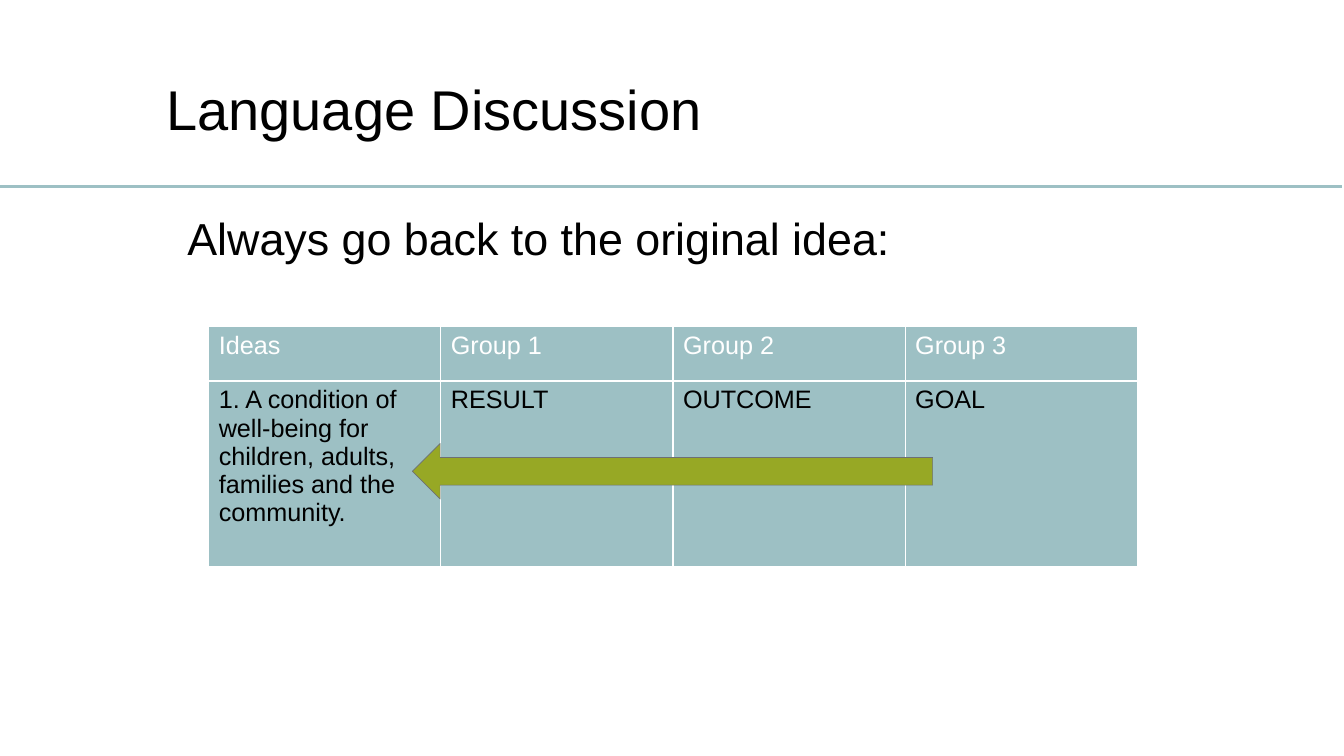
from lxml.etree import SubElement
from pptx import Presentation
from pptx.dml.color import RGBColor
from pptx.enum.shapes import MSO_CONNECTOR, MSO_SHAPE
from pptx.oxml.ns import qn
from pptx.util import Inches, Pt

TEAL = RGBColor(0x9D, 0xC0, 0xC4)
OLIVE = RGBColor(0x97, 0xA8, 0x25)
GRAY = RGBColor(0x6D, 0x70, 0x76)
WHITE = RGBColor(0xFF, 0xFF, 0xFF)
BLACK = RGBColor(0, 0, 0)

ROWS = [
    ["Ideas", "Group 1", "Group 2", "Group 3"],
    ["1. A condition of well-being for children, adults, families and the community.",
     "RESULT", "OUTCOME", "GOAL"],
]


class Deck:
    font = "Arial"

    def __init__(self, width, height):
        self.prs = Presentation()
        self.prs.slide_width = Inches(width)
        self.prs.slide_height = Inches(height)
        self.slide = self.prs.slides.add_slide(self.prs.slide_layouts[6])
        self.shapes = self.slide.shapes

    def label(self, frame, text, size, color):
        frame.word_wrap = True
        run = frame.paragraphs[0].add_run()
        run.text = text
        for name, value in {"name": self.font, "size": Pt(size), "bold": False}.items():
            setattr(run.font, name, value)
        run.font.color.rgb = color

    def text(self, box, text, size):
        shape = self.shapes.add_textbox(*map(Inches, box))
        self.label(shape.text_frame, text, size, BLACK)

    def rule(self, start, end, color, width):
        line = self.shapes.add_connector(
            MSO_CONNECTOR.STRAIGHT, *map(Inches, start + end))
        line.line.color.rgb = color
        line.line.width = Pt(width)
        SubElement(line._element.spPr, qn("a:effectLst"))

    def edge(self, cell, color, width):
        """Draw all four borders; they must precede the cell's fill."""
        props = cell._tc.get_or_add_tcPr()
        for side in ("lnL", "lnR", "lnT", "lnB"):
            line = SubElement(props, qn(f"a:{side}"), w=str(Pt(width)))
            fill = SubElement(line, qn("a:solidFill"))
            SubElement(fill, qn("a:srgbClr"), val=str(color))

    def table(self, box, rows, heights, size):
        grid = self.shapes.add_table(
            len(rows), len(rows[0]), *map(Inches, box)).table
        flags = {"first_row": False, "horz_banding": False}
        for name, value in flags.items():
            setattr(grid, name, value)
        for r, (row, height) in enumerate(zip(rows, heights)):
            grid.rows[r].height = Inches(height)
            for c, text in enumerate(row):
                cell = grid.cell(r, c)
                self.edge(cell, WHITE, 1)
                cell.fill.solid()
                cell.fill.fore_color.rgb = TEAL
                self.label(cell.text_frame, text, size, BLACK if r else WHITE)

    def arrow(self, box, turn):
        shape = self.shapes.add_shape(MSO_SHAPE.RIGHT_ARROW, *map(Inches, box))
        shape.rotation = turn
        shape.shadow.inherit = False
        shape.fill.solid()
        shape.fill.fore_color.rgb = OLIVE
        shape.line.color.rgb = GRAY
        shape.line.width = Pt(0.5)


def main():
    deck = Deck(13.33, 7.5)
    deck.rule((-0.02, 1.85), (13.31, 1.85), TEAL, 2)
    deck.text((1.55, 0.69, 8.08, 0.77), "Language Discussion", 40)
    deck.text((1.76, 2.04, 9.51, 1.72), "Always go back to the original idea:", 32)
    deck.table((2.07, 3.24, 9.21, 2.38), ROWS, (0.54, 1.84), 18)
    deck.arrow((4.09, 4.4, 5.16, 0.55), 180)
    deck.prs.save("out.pptx")


if __name__ == "__main__":
    main()
